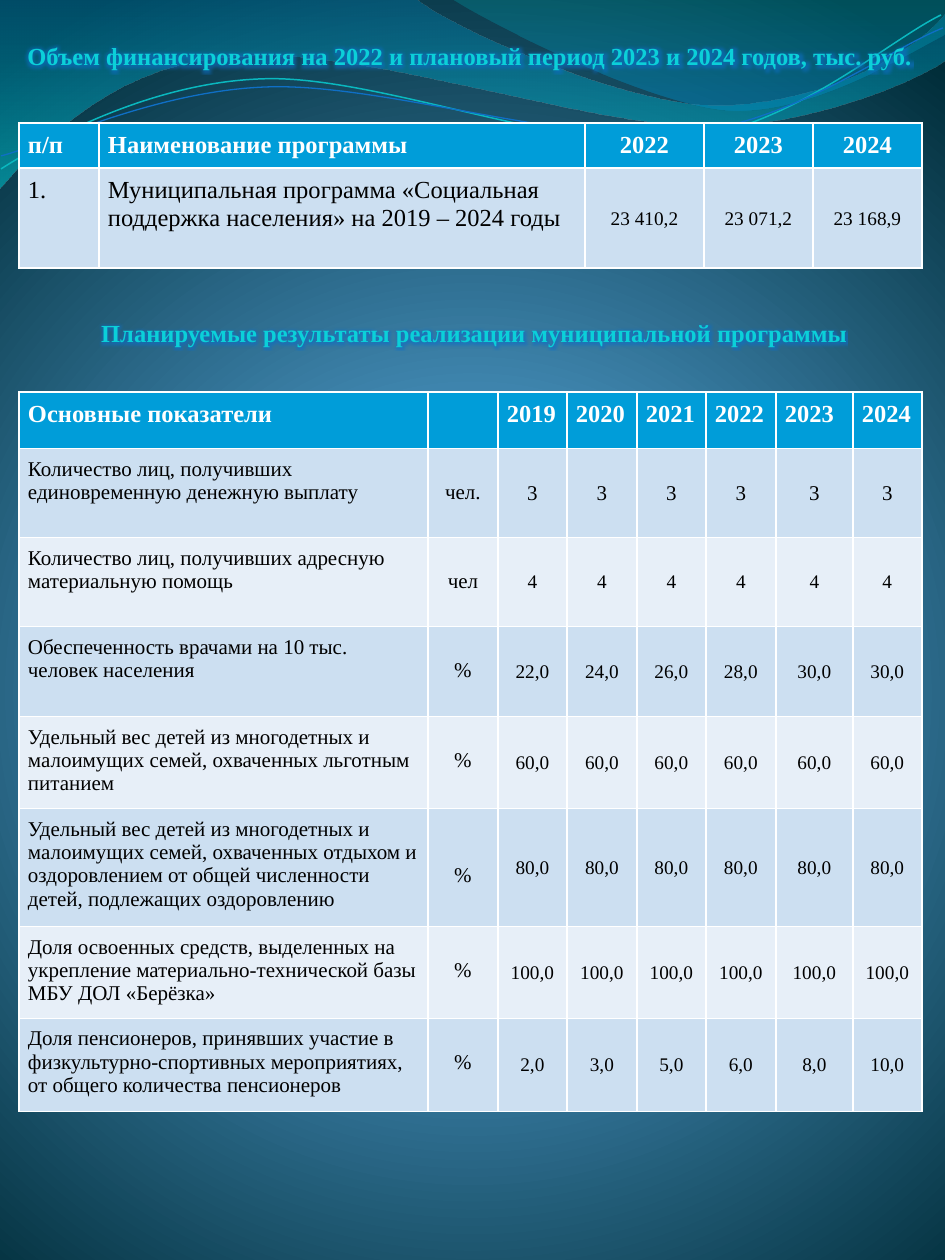
from lxml import etree
from pptx import Presentation
from pptx import util as u
from pptx.dml.color import RGBColor
from pptx.enum import text
from pptx.oxml import ns

PX = 914400 / 126
FACE = "Times New Roman"
WHITE, BLACK, HEADER, ACCENT = "FFFFFF", "000000", "009DD9", "0BD0D9"
BANDS = ("CCDFF1", "E7EFF8")
LEFT, CENTER = text.PP_ALIGN.LEFT, text.PP_ALIGN.CENTER
HEAD = {"size": u.Pt(14), "bold": True}
PLAIN = {"size": u.Pt(14), "bold": False}
LABEL = {"size": u.Pt(12), "bold": False}
VALUE = {"size": u.Pt(11), "bold": False}
PADDED = dict.fromkeys(("margin_left", "margin_top", "margin_right", "margin_bottom"), 9)
TIGHT = {**dict.fromkeys(PADDED, 1), "margin_bottom": 0}

RIBBONS = [
    ((0, -1), [
        [(416, -1)],
        [(450, 28), (627, 106), (717, 106)],
        [(806, 106), (906, 63), (945, 15)],
        [(946, 60)],
        [(930, 73), (822, 127), (704, 127)],
        [(587, 126), (360, 47), (243, 57)],
        [(122, 59), (43, 140), (-1, 190)],
    ], [(0, "0074A1", 45), (100, "00C6CF", 55)]),
    ((452, -1), [
        [(481, 19), (644, 103), (727, 110)],
        [(809, 116), (908, 54), (945, 35)],
        [(945, 0)],
    ], [(0, "00A1A9", 30), (80, "008BBF", 45)]),
]
STRANDS = [
    ((1, 169), [
        [(45, 141), (149, 83), (261, 79)],
        [(373, 74), (561, 152), (674, 141)],
        [(789, 131), (886, 42), (941, 15)],
    ], "0AB8BF", 0.85),
    ((1, 156), [
        [(45, 145), (154, 91), (267, 87)],
        [(381, 83), (565, 144), (678, 134)],
        [(791, 125), (887, 50), (943, 28)],
    ], "0F6FC6", 0.75),
]

FUNDING = [
    ["п/п", "Наименование программы", "2022", "2023", "2024"],
    ["1.", "Муниципальная программа «Социальная поддержка населения» на 2019 – 2024 годы",
     "23 410,2", "23 071,2", "23 168,9"],
]
RESULTS = [
    ["Основные показатели", "", "2019", "2020", "2021", "2022", "2023", "2024"],
    ["Количество лиц, получивших единовременную денежную выплату", "чел."] + ["3"] * 6,
    ["Количество лиц, получивших адресную материальную помощь", "чел"] + ["4"] * 6,
    ["Обеспеченность врачами на 10 тыс. человек населения", "%",
     "22,0", "24,0", "26,0", "28,0", "30,0", "30,0"],
    ["Удельный вес детей из многодетных и малоимущих семей, охваченных льготным питанием",
     "%"] + ["60,0"] * 6,
    ["Удельный вес детей из многодетных и малоимущих семей, охваченных отдыхом и "
     "оздоровлением от общей численности детей, подлежащих оздоровлению", "%"] + ["80,0"] * 6,
    ["Доля освоенных средств, выделенных на укрепление материально-технической базы "
     "МБУ ДОЛ «Берёзка»", "%"] + ["100,0"] * 6,
    ["Доля пенсионеров, принявших участие в физкультурно-спортивных мероприятиях, "
     "от общего количества пенсионеров", "%", "2,0", "3,0", "5,0", "6,0", "8,0", "10,0"],
]


def px(length):
    """Turn px into EMU."""
    return u.Emu(round(length * PX))


def color(value):
    """Turn a hex string into a colour."""
    return RGBColor.from_string(value)


def sub(parent, tag, **attributes):
    """Append a child element with the given attributes."""
    values = {key: str(value) for key, value in attributes.items()}
    return etree.SubElement(parent, ns.qn(tag), values)


def set_stops(gradient, stops):
    """Replace the content of a gradient with stops of position, colour and opacity."""
    for child in list(gradient):
        gradient.remove(child)
    stop_list = sub(gradient, "a:gsLst")
    for position, value, opacity in stops:
        stop = sub(stop_list, "a:gs", pos=position * 1000)
        sub(sub(stop, "a:srgbClr", val=value), "a:alpha", val=opacity * 1000)


def write(paragraph, words, formats, value, align):
    """Fill a paragraph with one formatted run."""
    paragraph.alignment = align
    run = paragraph.add_run()
    run.text = words
    for key, setting in {**formats, "name": FACE}.items():
        setattr(run.font, key, setting)
    run.font.color.rgb = color(value)
    return run


def paint_background(slide):
    """Give the slide its radial glow."""
    slide.background.fill.gradient()
    gradient = slide._element.xpath(".//p:bgPr/a:gradFill")[0]
    set_stops(gradient, [(0, "4AA0D6", 100), (25, "4C98C7", 100), (100, "002C38", 100)])
    sub(sub(gradient, "a:path", path="circle"), "a:fillToRect",
        l=10000, t=110000, r=10000, b=100000)


def draw_curve(slide, box, start, segments, closed):
    """Build an outline in which each segment of three points is a Bezier curve."""
    points = [point for segment in segments for point in segment]
    builder = slide.shapes.build_freeform(*start, scale=PX)
    builder.add_line_segments(points, close=closed)
    curve = builder.convert_to_shape(px(box[0]), px(box[1]))
    curve.shadow.inherit = False
    steps = iter(curve._element.xpath(".//a:lnTo"))
    for segment in segments:
        first, *others = [next(steps) for _ in segment]
        if others:
            first.tag = ns.qn("a:cubicBezTo")
            for step in others:
                first.append(step[0])
                step.getparent().remove(step)
    return curve


def add_waves(slide, box):
    """Draw the ribbons and strands across the top."""
    for start, segments, stops in RIBBONS:
        ribbon = draw_curve(slide, box, start, segments, True)
        ribbon.line.fill.background()
        ribbon.fill.gradient()
        gradient = ribbon._element.xpath("./p:spPr/a:gradFill")[0]
        set_stops(gradient, stops)
        sub(gradient, "a:lin", ang=5400000, scaled=0)
    for start, segments, value, width in STRANDS:
        strand = draw_curve(slide, box, start, segments, False)
        strand.fill.background()
        strand.line.color.rgb = color(value)
        strand.line.width = u.Pt(width)


def add_heading(heading, box, words):
    """Place a glowing heading in its box."""
    for key, length in zip(("left", "top", "width", "height"), box):
        setattr(heading, key, px(length))
    frame = heading.text_frame
    settings = {"word_wrap": True, "auto_size": text.MSO_AUTO_SIZE.NONE,
                "vertical_anchor": text.MSO_ANCHOR.TOP}
    for key, setting in settings.items():
        setattr(frame, key, setting)
    run = write(frame.paragraphs[0], words, HEAD, ACCENT, CENTER)
    effects = etree.Element(ns.qn("a:effectLst"))
    glow = sub(sub(effects, "a:glow", rad=63500), "a:srgbClr", val="0F6FC6")
    sub(glow, "a:alpha", val=60000)
    run._r.xpath("./a:rPr/a:solidFill")[0].addnext(effects)


def fill_cell(cell, words, band, formats, value, align, margins, anchor=text.MSO_ANCHOR.TOP):
    """Write, paint and border one cell."""
    for key, length in margins.items():
        setattr(cell, key, px(length))
    cell.vertical_anchor = anchor
    cell.fill.solid()
    cell.fill.fore_color.rgb = color(band)
    if words:
        write(cell.text_frame.paragraphs[0], words, formats, value, align)
    properties = cell._tc.get_or_add_tcPr()
    for place, side in enumerate(("a:lnL", "a:lnR", "a:lnT", "a:lnB")):
        border = sub(properties, side, w=12700)
        sub(sub(border, "a:solidFill"), "a:srgbClr", val=WHITE)
        properties.insert(place, border)


def add_grid(slide, box, rows, widths, heights, head_align, row_style):
    """Place a table with a header row and banded rows."""
    size = sum(widths), sum(heights)
    grid = slide.shapes.add_table(len(rows), len(widths), *map(px, (*box, *size))).table
    for column, width in zip(grid.columns, widths):
        column.width = px(width)
    for r, (row, height) in enumerate(zip(rows, heights)):
        grid.rows[r].height = px(height)
        for c, words in enumerate(row):
            if r == 0:
                style = HEADER, HEAD, WHITE, head_align(c), PADDED
            else:
                style = BANDS[(r - 1) % 2], *row_style(r, c)
            fill_cell(grid.cell(r, c), words, *style)


def funding_style(r, c):
    """Style the body cells of the funding table."""
    if c < 2:
        return PLAIN, BLACK, LEFT, PADDED
    return VALUE, BLACK, CENTER, TIGHT, text.MSO_ANCHOR.MIDDLE


def results_style(r, c):
    """Style the body cells of the results table."""
    if c == 0:
        return LABEL, BLACK, LEFT, PADDED
    if c == 1:
        return LABEL, BLACK, CENTER, {**PADDED, "margin_top": 55 if r == 5 else 32}
    return LABEL if r == 1 else VALUE, BLACK, CENTER, TIGHT, text.MSO_ANCHOR.MIDDLE


def main():
    """Build the slide and save it."""
    deck = Presentation()
    deck.slide_width, deck.slide_height = px(945), px(1260)
    slide = deck.slides.add_slide(deck.slide_layouts[5])
    paint_background(slide)
    add_waves(slide, (0, 0))
    add_grid(slide, (19, 123), FUNDING, (80, 486, 119, 109, 109), (45, 100),
             lambda c: LEFT if c < 2 else CENTER, funding_style)
    title = slide.shapes.title
    slide.shapes._spTree.append(title._element)
    add_heading(title, (2, 35, 936, 43),
                "Объем финансирования на 2022 и плановый период 2023 и 2024 годов, тыс. руб.")
    add_heading(slide.shapes.add_textbox(0, 0, 0, 0), (2, 312, 945, 43),
                "Планируемые результаты реализации муниципальной программы")
    add_grid(slide, (19, 392), RESULTS, (409, 70, 69, 70, 69, 70, 77, 69),
             (46, 89, 89, 90, 92, 118, 92, 93), lambda c: LEFT, results_style)
    deck.save("out.pptx")


if __name__ == "__main__":
    main()
